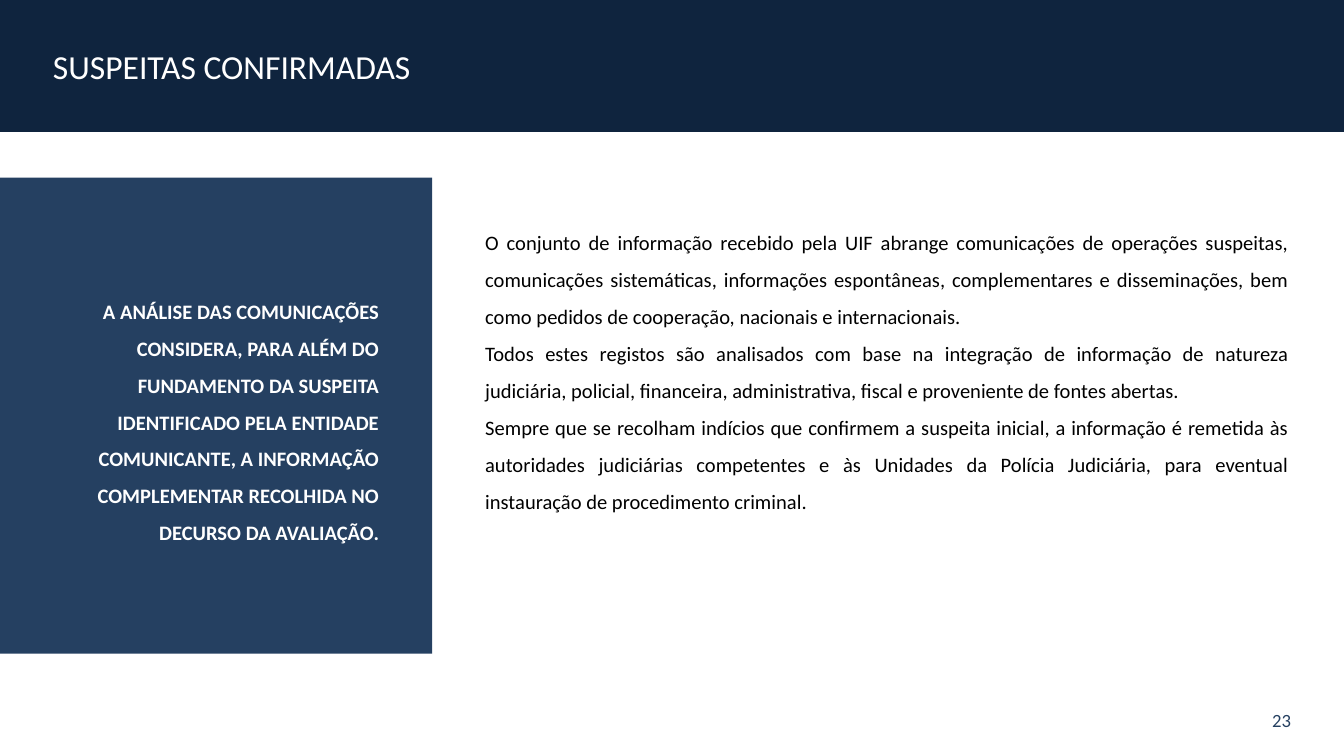
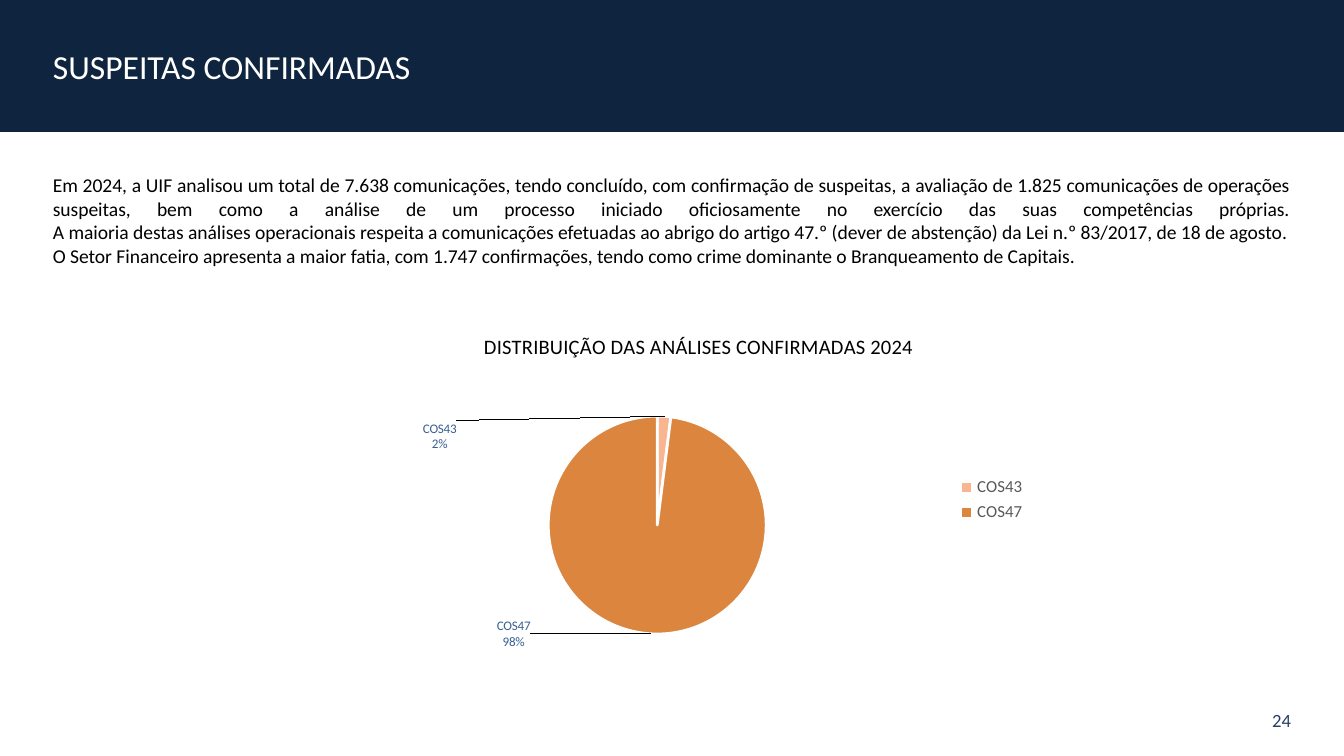
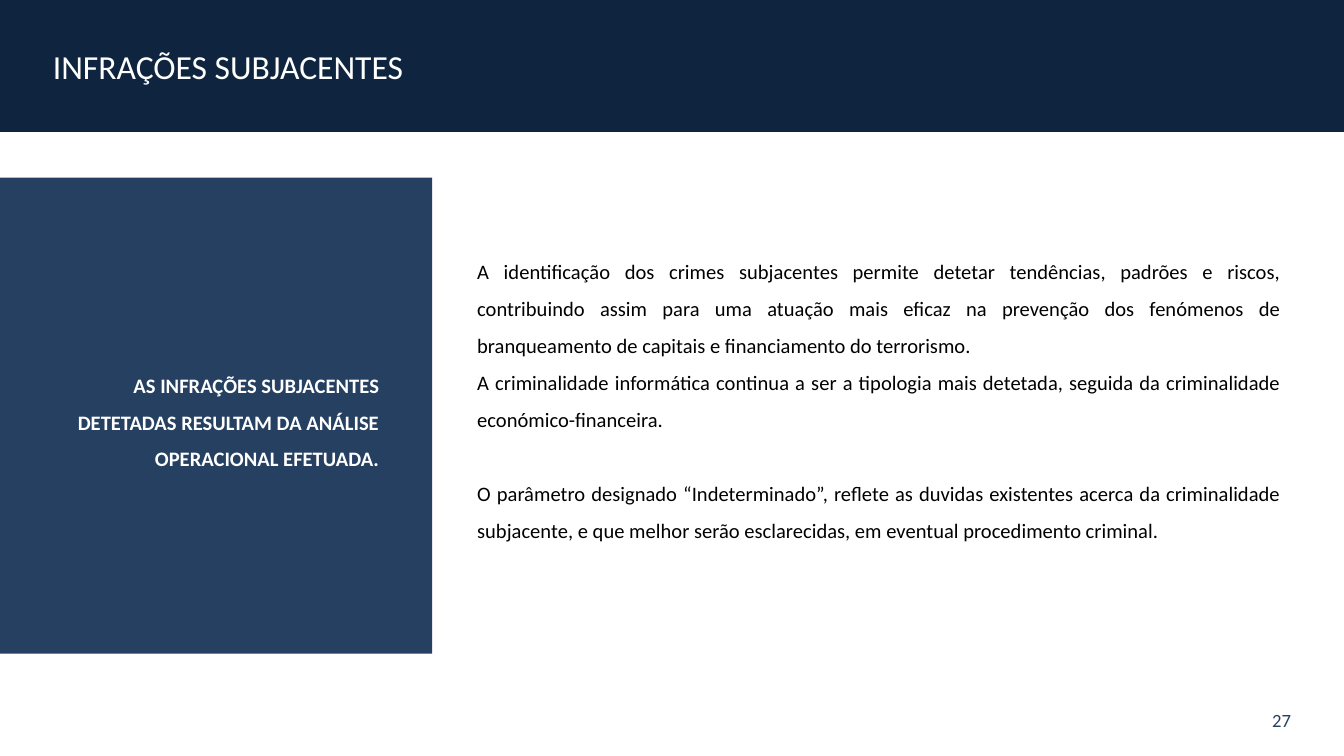
from collections import namedtuple
from dataclasses import dataclass

from lxml import etree
from pptx import Presentation
from pptx.chart.data import CategoryChartData
from pptx.dml.color import RGBColor
from pptx.enum.chart import XL_CHART_TYPE, XL_LABEL_POSITION, XL_LEGEND_POSITION
from pptx.enum.shapes import MSO_SHAPE
from pptx.enum.text import MSO_ANCHOR, MSO_AUTO_SIZE, PP_ALIGN
from pptx.oxml.ns import qn
from pptx.util import Pt

LEFT, RIGHT, JUSTIFY = PP_ALIGN.LEFT, PP_ALIGN.RIGHT, PP_ALIGN.JUSTIFY
TOP, MIDDLE = MSO_ANCHOR.TOP, MSO_ANCHOR.MIDDLE
GROW, FIXED = MSO_AUTO_SIZE.SHAPE_TO_FIT_TEXT, MSO_AUTO_SIZE.NONE
PIE = XL_CHART_TYPE.PIE
OUTSIDE = XL_LABEL_POSITION.OUTSIDE_END
LEGEND_RIGHT = XL_LEGEND_POSITION.RIGHT
RECTANGLE = MSO_SHAPE.RECTANGLE
TITLE_ONLY = 5


@dataclass(frozen=True)
class Theme:
    font: str = "Calibri"
    navy: str = "0F243E"
    blue: str = "254061"
    label_blue: str = "376092"
    white: str = "FFFFFF"
    black: str = "000000"
    grey: str = "595959"
    peach: str = "F9B590"
    orange: str = "DB853E"
    title_size: float = 18
    body_size: float = 11
    summary_size: float = 10.5
    number_size: float = 10
    legend_size: float = 9
    label_size: float = 7
    side_inset: float = 28.35
    title_inset: float = 14.4
    text_inset: float = 7.2
    spacing: float = 1.5
    blank_line: float = 19.8


THEME = Theme()
Box = namedtuple("Box", "left top width height")
Para = namedtuple("Para", "lines align before", defaults=(JUSTIFY, 0))

PAGE = Box(0, 0, 720, 405)
TITLE_BAND = Box(0, 0, PAGE.width, 70.6)
PAGE_NUMBER = Box(618.5, 375, 101.5, 21.6)
SIDE_PANEL = Box(0, 95.2, 231.6, 255)
SUMMARY = Box(0, 85.7, PAGE.width, 77.8)
PIE_BOX = Box(191.5, 163.4, 365, 208.8)


def rgb(value):
    return RGBColor.from_string(value)


def lengths(box):
    return [Pt(value) for value in box]


def style_font(font, size, color, bold=False):
    font.name = THEME.font
    font.size = Pt(size)
    font.bold = bold
    font.color.rgb = rgb(color)


def fill_solid(shape, color):
    shape.fill.solid()
    shape.fill.fore_color.rgb = rgb(color)
    shape.line.fill.background()


def write(frame, paras, size, color, bold=False, spacing=None,
          anchor=MIDDLE, inset=THEME.text_inset, fit=FIXED):
    frame.word_wrap = True
    frame.auto_size = fit
    frame.vertical_anchor = anchor
    frame.margin_left = frame.margin_right = Pt(THEME.side_inset)
    frame.margin_top = frame.margin_bottom = Pt(inset)
    for index, para in enumerate(paras):
        paragraph = frame.add_paragraph() if index else frame.paragraphs[0]
        paragraph.alignment = para.align
        if spacing:
            paragraph.line_spacing = spacing
        if para.before:
            paragraph.space_before = Pt(para.before)
        for number, line in enumerate(para.lines):
            if number:
                paragraph.add_line_break()
            run = paragraph.add_run()
            run.text = line
            style_font(run.font, size, color, bold)


def add_titled_slide(deck, title, number):
    slide = deck.slides.add_slide(deck.slide_layouts[TITLE_ONLY])
    band = slide.shapes.title
    band.left, band.top, band.width, band.height = lengths(TITLE_BAND)
    fill_solid(band, THEME.navy)
    write(band.text_frame, [Para([title], LEFT)], THEME.title_size, THEME.white,
          inset=THEME.title_inset)
    page_number = slide.shapes.add_textbox(*lengths(PAGE_NUMBER))
    write(page_number.text_frame, [Para([number], RIGHT)], THEME.number_size, THEME.blue)
    return slide


def add_side_panel(slide, box, message):
    panel = slide.shapes.add_shape(RECTANGLE, *lengths(box))
    panel.shadow.inherit = False
    fill_solid(panel, THEME.blue)
    write(panel.text_frame, [Para([message], RIGHT)], THEME.body_size, THEME.white,
          bold=True, spacing=THEME.spacing)


def add_body(slide, box, paras, size=THEME.body_size, spacing=THEME.spacing):
    body = slide.shapes.add_textbox(*lengths(box))
    write(body.text_frame, paras, size, THEME.black, spacing=spacing, anchor=TOP, fit=GROW)


def manual_layout(**values):
    layout = etree.Element(qn("c:layout"))
    manual = etree.SubElement(layout, qn("c:manualLayout"))
    for tag, value in values.items():
        etree.SubElement(manual, qn(f"c:{tag}")).set("val", str(value))
    return layout


def place_label(label_xml, dx, dy):
    label_xml.find(qn("c:idx")).addnext(manual_layout(x=dx, y=dy))
    for tag, shown in (("showVal", 0), ("showCatName", 1), ("showPercent", 1)):
        label_xml.find(qn(f"c:{tag}")).set("val", str(shown))
    etree.SubElement(label_xml, qn("c:separator")).text = "\n"


def add_distribution_pie(slide, box):
    data = CategoryChartData()
    data.categories = ["COS43", "COS47"]
    data.add_series("Series 1", [2, 98])
    chart = slide.shapes.add_chart(PIE, *lengths(box), data).chart
    style_font(chart.font, THEME.number_size, THEME.black)

    heading = chart.chart_title.text_frame.paragraphs[0].add_run()
    heading.text = "DISTRIBUIÇÃO DAS ANÁLISES CONFIRMADAS 2024"
    style_font(heading.font, THEME.body_size, THEME.black)
    title_xml = chart.chart_title._element
    for old in title_xml.findall(qn("c:layout")):
        title_xml.remove(old)
    title_xml.find(qn("c:tx")).addnext(
        manual_layout(xMode="edge", yMode="edge", x=0.18, y=0.06))

    chart.has_legend = True
    chart.legend.position = LEGEND_RIGHT
    chart.legend.include_in_layout = False
    style_font(chart.legend.font, THEME.legend_size, THEME.grey)

    plot = chart.plots[0]
    plot.vary_by_categories = True
    plot_xml = plot._element.getparent()
    for old in plot_xml.findall(qn("c:layout")):
        plot_xml.remove(old)
    plot_xml.insert(0, manual_layout(layoutTarget="inner", xMode="edge", yMode="edge",
                                     x=0.28, y=0.28, w=0.32, h=0.57))

    series = plot.series[0]
    labels = series.data_labels
    labels.show_value = False
    labels.show_category_name = labels.show_percentage = True
    labels.position = OUTSIDE
    style_font(labels.font, THEME.label_size, THEME.label_blue)
    slices = [(THEME.peach, -0.33, 0.11), (THEME.orange, -0.2, -0.06)]
    for index, (color, dx, dy) in enumerate(slices):
        point = series.points[index]
        point.format.fill.solid()
        point.format.fill.fore_color.rgb = rgb(color)
        point.format.line.color.rgb = rgb(THEME.white)
        point.format.line.width = Pt(1.5)
        style_font(point.data_label.font, THEME.label_size, THEME.label_blue)
        point.data_label.position = OUTSIDE
        place_label(labels._element.findall(qn("c:dLbl"))[index], dx, dy)


def build_panel_slide(deck, title, number, message, body_box, paras):
    slide = add_titled_slide(deck, title, number)
    add_body(slide, body_box, paras)
    add_side_panel(slide, SIDE_PANEL, message)


def build_chart_slide(deck, title, number, paras):
    slide = add_titled_slide(deck, title, number)
    add_body(slide, SUMMARY, paras, THEME.summary_size, None)
    add_distribution_pie(slide, PIE_BOX)


def main():
    deck = Presentation()
    deck.slide_width, deck.slide_height = Pt(PAGE.width), Pt(PAGE.height)
    build_panel_slide(
        deck, "SUSPEITAS CONFIRMADAS", "23",
        "A ANÁLISE DAS COMUNICAÇÕES CONSIDERA, PARA ALÉM DO FUNDAMENTO DA SUSPEITA "
        "IDENTIFICADO PELA ENTIDADE COMUNICANTE, A INFORMAÇÃO COMPLEMENTAR RECOLHIDA "
        "NO DECURSO DA AVALIAÇÃO.",
        Box(231.6, 109.5, 487.4, 172),
        [Para(["O conjunto de informação recebido pela UIF abrange comunicações de "
               "operações suspeitas, comunicações sistemáticas, informações espontâneas, "
               "complementares e disseminações, bem como pedidos de cooperação, nacionais "
               "e internacionais."]),
         Para(["Todos estes registos são analisados com base na integração de informação "
               "de natureza judiciária, policial, financeira, administrativa, fiscal e "
               "proveniente de fontes abertas."]),
         Para(["Sempre que se recolham indícios que confirmem a suspeita inicial, a "
               "informação é remetida às autoridades judiciárias competentes e às Unidades "
               "da Polícia Judiciária, para eventual instauração de procedimento criminal."])])
    build_chart_slide(
        deck, "SUSPEITAS CONFIRMADAS", "24",
        [Para(["Em 2024, a UIF analisou um total de 7.638 comunicações, tendo concluído, "
               "com confirmação de suspeitas, a avaliação de 1.825 comunicações de "
               "operações suspeitas, bem como a análise de um processo iniciado "
               "oficiosamente no exercício das suas competências próprias.",
               "A maioria destas análises operacionais respeita a comunicações efetuadas "
               "ao abrigo do artigo 47.º (dever de abstenção) da Lei n.º 83/2017, de 18 "
               "de agosto."]),
         Para(["O Setor Financeiro apresenta a maior fatia, com 1.747 confirmações, tendo "
               "como crime dominante o Branqueamento de Capitais."], LEFT)])
    build_panel_slide(
        deck, "INFRAÇÕES SUBJACENTES", "27",
        "AS INFRAÇÕES SUBJACENTES DETETADAS RESULTAM DA ANÁLISE OPERACIONAL EFETUADA.",
        Box(227.3, 124.8, 487.4, 185),
        [Para(["A identificação dos crimes subjacentes permite detetar tendências, padrões "
               "e riscos, contribuindo assim para uma atuação mais eficaz na prevenção dos "
               "fenómenos de branqueamento de capitais e financiamento do terrorismo."]),
         Para(["A criminalidade informática continua a ser a tipologia mais detetada, "
               "seguida da criminalidade económico-financeira."]),
         Para(["O parâmetro designado “Indeterminado”, reflete as duvidas existentes acerca "
               "da criminalidade subjacente, e que melhor serão esclarecidas, em eventual "
               "procedimento criminal."], before=THEME.blank_line)])
    deck.save("out.pptx")


if __name__ == "__main__":
    main()
